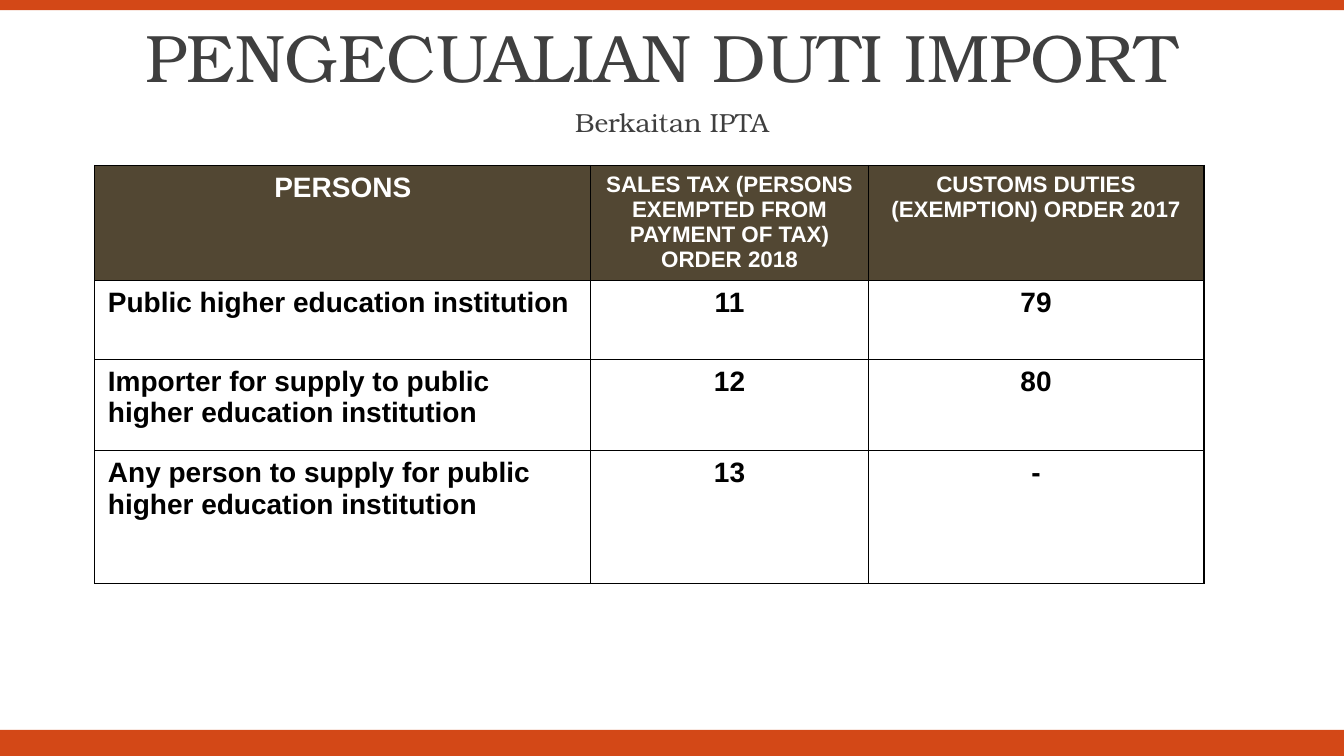
from dataclasses import dataclass
from typing import Any

from lxml.etree import SubElement
from pptx import Presentation
from pptx.dml.color import RGBColor
from pptx.enum.shapes import MSO_SHAPE
from pptx.enum.text import MSO_ANCHOR, MSO_AUTO_SIZE, PP_ALIGN
from pptx.oxml.ns import qn
from pptx.util import Cm, Pt

ORANGE = RGBColor(0xD3, 0x48, 0x17)
GREY = RGBColor(0x3F, 0x3F, 0x3F)
BROWN = RGBColor(0x52, 0x47, 0x33)
WHITE = RGBColor(0xFF, 0xFF, 0xFF)
BLACK = RGBColor(0, 0, 0)

WIDTH, HEIGHT = 33.87, 19.05
COLUMN_WIDTHS = (12.5, 6.99, 8.46)
ROW_HEIGHTS = (2.9, 1.98, 2.31, 3.35)
ROWS = (
    ("PERSONS", "SALES TAX (PERSONS EXEMPTED FROM PAYMENT OF TAX) ORDER 2018",
     "CUSTOMS DUTIES (EXEMPTION) ORDER 2017"),
    ("Public higher education institution", "11", "79"),
    ("Importer for supply to public higher education institution", "12", "80"),
    ("Any person to supply for public higher education institution", "13", "-"),
)
FRAME_FORMAT = {"word_wrap": True, "auto_size": MSO_AUTO_SIZE.NONE,
                "vertical_anchor": MSO_ANCHOR.MIDDLE}
CELL_FORMAT = {"margin_left": Cm(0.33), "margin_right": Cm(0.33),
               "margin_top": Cm(0.17), "margin_bottom": Cm(0.17),
               "vertical_anchor": MSO_ANCHOR.TOP}


@dataclass(frozen=True)
class Bar:
    top: float
    height: float


@dataclass(frozen=True)
class Heading:
    text: str
    top: float
    height: float
    size: float


BARS = (Bar(18.39, 0.66), Bar(0, 0.26))
TITLE = Heading("PENGECUALIAN DUTI IMPORT ", 0.46, 2.13, 48)
SUBTITLE = Heading("Berkaitan IPTA", 2.59, 1.07, 18.7)


def set_attributes(target: Any, values: dict[str, Any]) -> None:
    for name, value in values.items():
        setattr(target, name, value)


def write(p: Any, text: str, color: RGBColor, align: PP_ALIGN, **font: Any) -> None:
    p.alignment = align
    r = p.add_run()
    r.text = text
    set_attributes(r.font, font)
    r.font.color.rgb = color


def add_bar(slide: Any, bar: Bar) -> None:
    sp = slide.shapes.add_shape(MSO_SHAPE.RECTANGLE, 0, Cm(bar.top),
                                Cm(WIDTH), Cm(bar.height))
    sp.shadow.inherit = False
    sp.fill.solid()
    sp.fill.fore_color.rgb = ORANGE
    sp.line.fill.background()


def format_heading(sp: Any, heading: Heading) -> None:
    set_attributes(sp, {"left": 0, "top": Cm(heading.top),
                        "width": Cm(WIDTH), "height": Cm(heading.height)})
    tf = sp.text_frame
    set_attributes(tf, FRAME_FORMAT)
    p = tf.paragraphs[0]
    p.line_spacing = 0.9
    write(p, heading.text, GREY, PP_ALIGN.CENTER,
          name="TeX Gyre Bonum", size=Pt(heading.size), bold=False)


def add_borders(cell: Any) -> None:
    """Draw a thin black line on all four sides; call before filling the cell."""
    tc_pr = cell._tc.get_or_add_tcPr()
    for side in ("a:lnL", "a:lnR", "a:lnT", "a:lnB"):
        ln = SubElement(tc_pr, qn(side), w=str(Pt(1)))
        fill = SubElement(ln, qn("a:solidFill"))
        SubElement(fill, qn("a:srgbClr"), val=str(BLACK))


def format_cell(cell: Any, text: str, row: int, column: int) -> None:
    header = row == 0
    set_attributes(cell, CELL_FORMAT)
    add_borders(cell)
    cell.fill.solid()
    cell.fill.fore_color.rgb = BROWN if header else WHITE
    write(cell.text_frame.paragraphs[0], text, WHITE if header else BLACK,
          PP_ALIGN.CENTER if header or column else PP_ALIGN.LEFT,
          name="Arial", size=Pt(16 if header and column else 20), bold=True)


def add_exemption_table(slide: Any) -> None:
    table = slide.shapes.add_table(
        len(ROWS), len(COLUMN_WIDTHS), Cm(2.39), Cm(4.17),
        Cm(sum(COLUMN_WIDTHS)), Cm(sum(ROW_HEIGHTS))).table
    table.horz_banding = False
    for column, width in zip(table.columns, COLUMN_WIDTHS):
        column.width = Cm(width)
    for i, (height, texts) in enumerate(zip(ROW_HEIGHTS, ROWS)):
        table.rows[i].height = Cm(height)
        for j, text in enumerate(texts):
            format_cell(table.cell(i, j), text, i, j)


def main() -> None:
    prs = Presentation()
    prs.slide_width, prs.slide_height = Cm(WIDTH), Cm(HEIGHT)
    slide = prs.slides.add_slide(prs.slide_layouts.get_by_name("Title Only"))
    for bar in BARS:
        add_bar(slide, bar)
    format_heading(slide.shapes.title, TITLE)
    format_heading(slide.shapes.add_textbox(0, 0, 0, 0), SUBTITLE)
    add_exemption_table(slide)
    prs.save("out.pptx")


if __name__ == "__main__":
    main()
